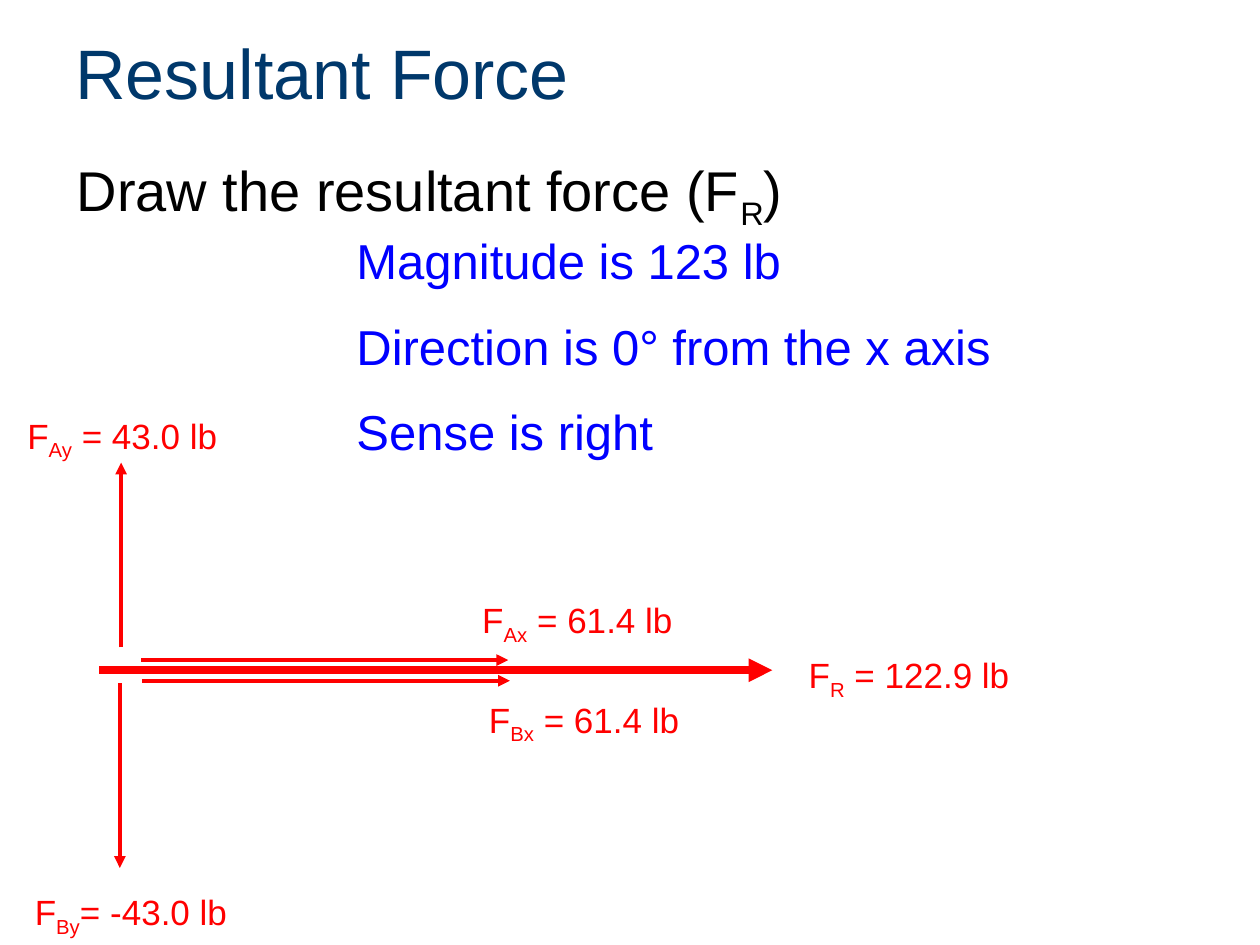
from pptx import Presentation
from pptx.dml.color import RGBColor
from pptx.enum import shapes, text
from pptx.oxml import ns
from pptx.util import Pt
from lxml import etree

NAVY = RGBColor(0x00, 0x38, 0x6B)
BLACK = RGBColor(0x00, 0x00, 0x00)
BLUE = RGBColor(0x00, 0x00, 0xFF)
RED = RGBColor(0xFF, 0x00, 0x00)
FONT = "Arial"
SUBSCRIPT = "-25000"
LABEL_SIZE = 20


def add_text(slide, box, lines, size, color, lead=0.1, gap=0, wrap=True,
             anchor=text.MSO_ANCHOR.TOP):
    """Each line is a tuple of pieces; every second piece is a subscript."""
    frame = slide.shapes.add_textbox(*map(Pt, box)).text_frame
    frame.word_wrap = wrap
    frame.vertical_anchor = anchor
    frame.margin_top = Pt(3.6 + lead * size)
    for row, pieces in enumerate(lines):
        paragraph = frame.add_paragraph() if row else frame.paragraphs[0]
        if row:
            paragraph.space_before = Pt(gap)
        for index, piece in enumerate(pieces):
            run = paragraph.add_run()
            run.text = piece
            run.font.name = FONT
            run.font.size = Pt(size)
            run.font.color.rgb = color
            if index % 2:
                run.font._element.set("baseline", SUBSCRIPT)


def add_force(slide, start, end, width=2.25):
    """Red arrow pointing from start to end."""
    arrow = slide.shapes.add_connector(
        shapes.MSO_CONNECTOR.STRAIGHT, *map(Pt, start + end))
    arrow.line.color.rgb = RED
    arrow.line.width = Pt(width)
    head = etree.SubElement(arrow.line._get_or_add_ln(), ns.qn("a:tailEnd"))
    head.set("type", "triangle")
    etree.SubElement(arrow._element.spPr, ns.qn("a:effectLst"))


def main():
    deck = Presentation()
    deck.slide_width, deck.slide_height = Pt(720), Pt(540)
    slide = deck.slides.add_slide(deck.slide_layouts[6])

    # Title and task
    add_text(slide, (36, 13, 648, 56), [("Resultant Force",)], 40, NAVY,
             lead=0, anchor=text.MSO_ANCHOR.MIDDLE)
    add_text(slide, (36.7, 82, 574.6, 60),
             [("Draw the resultant force (F", "R", ")")], 32, BLACK)

    # Answers
    answers = [("Magnitude is 123 lb",),
               ("Direction is 0° from the x axis",),
               ("Sense is right",)]
    add_text(slide, (196.6, 125.3, 416.9, 141.8), answers, 28, BLUE, gap=15.4)

    # Components, then the resultant
    add_force(slide, (80.6, 377.2), (290.4, 377.2))
    add_force(slide, (81.4, 389), (291.4, 389))
    add_force(slide, (68.5, 390.4), (68.5, 496))
    add_force(slide, (69.2, 370), (69.2, 264.4))
    add_force(slide, (56.7, 383), (441.3, 383), width=4.5)

    # Force labels: left, top, width, subscript, value
    labels = [(455, 368, 129.6, "R", " = 122.9 lb"),
              (268.5, 336.3, 152, "Ax", " = 61.4 lb"),
              (272.3, 393.3, 162, "Bx", " = 61.4 lb"),
              (8.5, 231, 146, "Ay", " = 43.0 lb"),
              (12.8, 503.5, 131.8, "By", "= -43.0 lb")]
    for left, top, width, name, value in labels:
        add_text(slide, (left, top, width, 31), [("F", name, value)],
                 LABEL_SIZE, RED, wrap=name != "R")

    deck.save("out.pptx")


if __name__ == "__main__":
    main()
